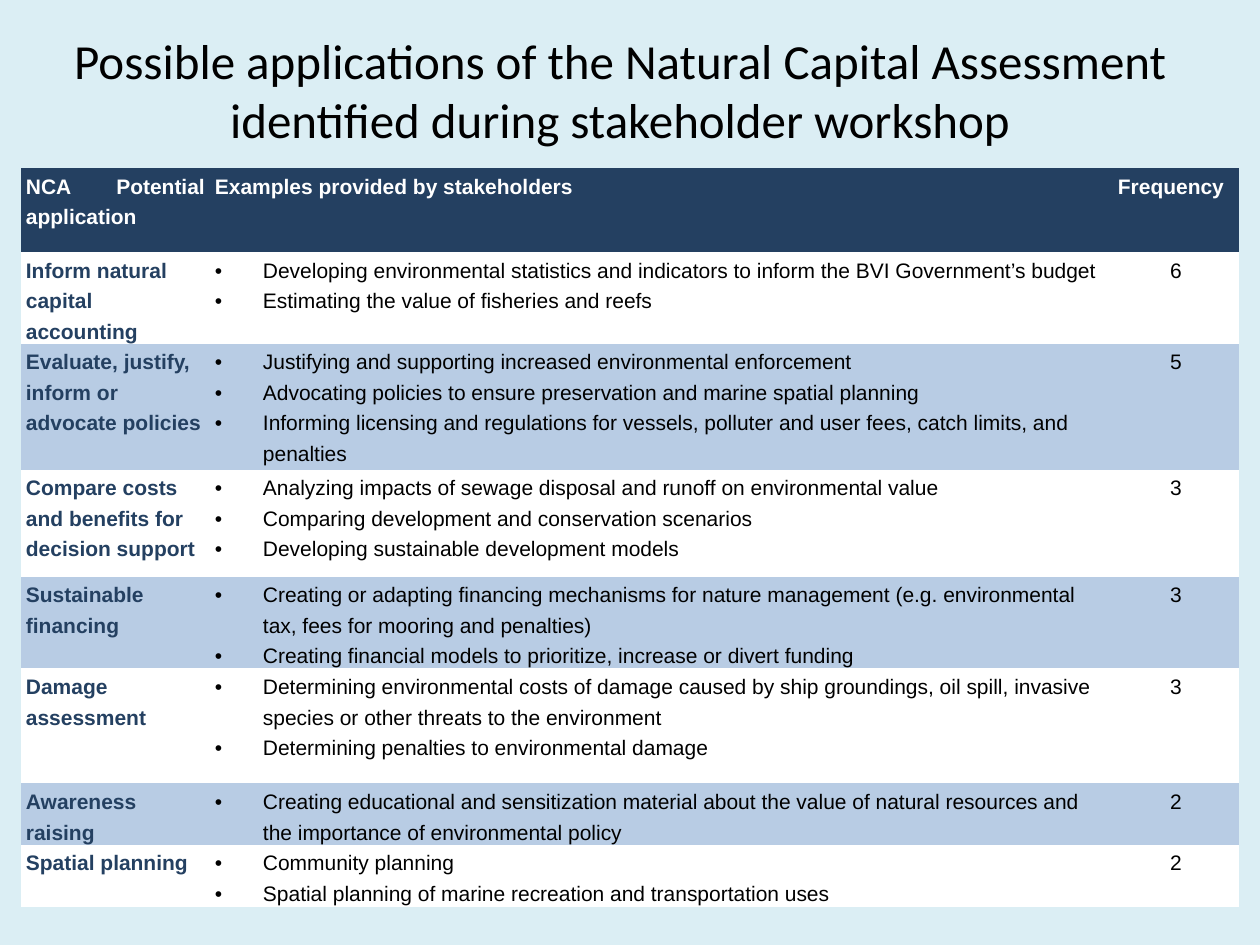
from lxml import etree
from pptx import Presentation, util as u
from pptx.dml.color import RGBColor
from pptx.enum import text as t
from pptx.oxml.ns import qn

SCALE = 914400 / 126
NAVY, BLUE, WHITE, BLACK, PALE = "244061", "B8CCE4", "FFFFFF", "000000", "DBEEF4"
PLAIN = "{2D5ABB26-0587-4C30-8999-92F81FD0307C}"  # no style, no grid
LEFT, MID, JUST = t.PP_ALIGN.LEFT, t.PP_ALIGN.CENTER, t.PP_ALIGN.JUSTIFY

TITLE = ("Possible applications of the Natural Capital Assessment "
         "identified during stakeholder workshop")
HEADS = ["NCA Potential application", "Examples provided by stakeholders", "Frequency"]
COLS = [189, 903, 126]
HEAD_H = 84
# row height, application, examples, frequency
ROWS = [
    (88, "Inform natural capital accounting", [
        "Developing environmental statistics and indicators to inform the BVI Government’s budget",
        "Estimating the value of fisheries and reefs"], 6),
    (126, "Evaluate, justify, inform or advocate policies", [
        "Justifying and supporting increased environmental enforcement",
        "Advocating policies to ensure preservation and marine spatial planning",
        "Informing licensing and regulations for vessels, polluter and user fees, "
        "catch limits, and penalties"], 5),
    (107, "Compare costs and benefits for decision support", [
        "Analyzing impacts of sewage disposal and runoff on environmental value",
        "Comparing development and conservation scenarios",
        "Developing sustainable development models"], 3),
    (88, "Sustainable financing", [
        "Creating or adapting financing mechanisms for nature management "
        "(e.g. environmental tax, fees for mooring and penalties)",
        "Creating financial models to prioritize, increase or divert funding"], 3),
    (115, "Damage assessment", [
        "Determining environmental costs of damage caused by ship groundings, oil spill, "
        "invasive species or other threats to the environment",
        "Determining penalties to environmental damage"], 3),
    (50, "Awareness raising", [
        "Creating educational and sensitization material about the value of natural "
        "resources and the importance of environmental policy"], 2),
    (62, "Spatial planning", [
        "Community planning",
        "Spatial planning of marine recreation and transportation uses"], 2),
]


def px(n):
    return u.Emu(round(n * SCALE))


def paint(fill, hue):
    fill.solid()
    fill.fore_color.rgb = RGBColor.from_string(hue)


def put(obj, vals):
    for key, val in vals.items():
        setattr(obj, key, val)


def write(para, words, face, size, hue, bold=False, **form):
    put(para, form)
    run = para.add_run()
    run.text = words
    put(run.font, {"name": face, "size": u.Pt(size), "bold": bold})
    paint(run.font.fill, hue)


def bullet(para):
    prop = para._p.get_or_add_pPr()
    prop.set("marL", str(px(48)))
    prop.set("indent", str(-px(48)))
    face = etree.SubElement(prop, qn("a:buFont"))
    face.set("typeface", "Arial")
    etree.SubElement(prop, qn("a:buChar")).set("char", "•")


def cell_text(cell, lines, back, hue, bold=False, gap=0, align=LEFT, dots=False):
    paint(cell.fill, back)
    put(cell, {"margin_left": px(5), "margin_right": px(5),
               "margin_top": 0, "margin_bottom": 0})
    frame = cell.text_frame
    for i, line in enumerate(lines):
        para = frame.add_paragraph() if i else frame.paragraphs[0]
        write(para, line, "Arial", 12, hue, bold, alignment=align, line_spacing=1.3,
              space_before=u.Pt(gap), space_after=u.Pt(gap))
        if dots:
            bullet(para)


def title(slide, x, y, w, h):
    frame = slide.shapes.add_textbox(px(x), px(y), px(w), px(h)).text_frame
    put(frame, {"word_wrap": True, "vertical_anchor": t.MSO_ANCHOR.MIDDLE})
    write(frame.paragraphs[0], TITLE, "Calibri", 28, BLACK, alignment=MID)


def table(slide, x, y):
    highs = [HEAD_H] + [row[0] for row in ROWS]
    grid = slide.shapes.add_table(len(highs), len(COLS), px(x), px(y),
                                  px(sum(COLS)), px(sum(highs))).table
    grid._tbl.tblPr.find(qn("a:tableStyleId")).text = PLAIN
    grid.horz_banding = False
    for col, wide in zip(grid.columns, COLS):
        col.width = px(wide)
    for row, high in zip(grid.rows, highs):
        row.height = px(high)
    for c, head in enumerate(HEADS):
        cell_text(grid.cell(0, c), [head], NAVY, WHITE, True, 6, LEFT if c else JUST)
    for r, (_, use, notes, count) in enumerate(ROWS, 1):
        back = WHITE if r % 2 else BLUE
        cell_text(grid.cell(r, 0), [use], back, NAVY, True, 3)
        cell_text(grid.cell(r, 1), notes, back, BLACK, dots=True)
        cell_text(grid.cell(r, 2), [str(count)], back, BLACK, gap=3, align=MID)


def main():
    deck = Presentation()
    put(deck, {"slide_width": px(1260), "slide_height": px(945)})
    slide = deck.slides.add_slide(deck.slide_layouts[6])
    paint(slide.background.fill, PALE)
    table(slide, 21, 168)
    title(slide, 53, 10, 1134, 158)
    deck.save("out.pptx")


if __name__ == "__main__":
    main()
